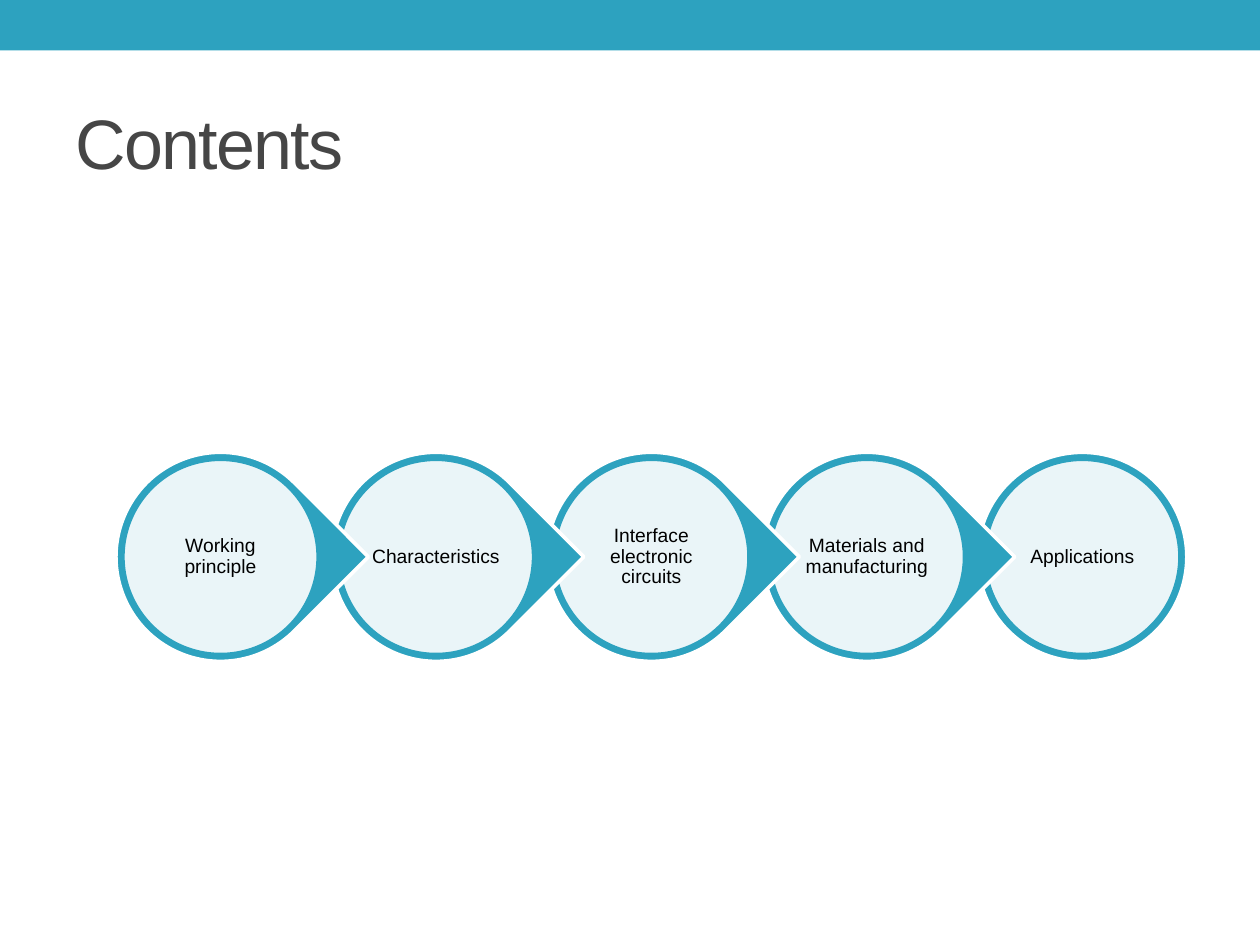
import dataclasses

import pptx
import pptx.dml.color
import pptx.enum.shapes
import pptx.enum.text
import pptx.oxml
import pptx.oxml.ns
import pptx.util
from pptx.util import Inches

SHAPE = pptx.enum.shapes.MSO_SHAPE
ALIGN = pptx.enum.text.PP_ALIGN


def rgb(value):
    return pptx.dml.color.RGBColor.from_string(value)


@dataclasses.dataclass(frozen=True)
class Theme:
    accent: str = "2DA2BF"
    white: str = "FFFFFF"
    title: str = "464646"
    label: str = "000000"
    font: str = "Arial"
    title_size: int = 40
    label_size: int = 11
    line_width: float = 2.08


class SlideBuilder:
    def __init__(self, slide, theme):
        self.s = slide
        self.theme = theme
        self.shapes = slide.shapes

    def begin_group(self):
        """Send all later elements into a new group."""
        self.shapes = self.s.shapes.add_group_shape().shapes

    def shape(self, kind, box, fill, line=None, opacity=None):
        sp = self.shapes.add_shape(kind, *map(Inches, box))
        sp.shadow.inherit = False
        sp.fill.solid()
        sp.fill.fore_color.rgb = rgb(fill)
        if opacity is not None:
            color = sp.fill._xPr.find(".//" + pptx.oxml.ns.qn("a:srgbClr"))
            color.append(pptx.oxml.parse_xml(
                f'<a:alpha {pptx.oxml.ns.nsdecls("a")} val="{opacity * 1000}"/>'))
        if line:
            sp.line.color.rgb = rgb(line)
            sp.line.width = pptx.util.Pt(self.theme.line_width)
        else:
            sp.line.fill.background()
        return sp

    def text(self, text, box, size, color, inset=None, tracking=None, **paragraph):
        """Add vertically centred text; extra keywords set paragraph formats."""
        tf = self.shapes.add_textbox(*map(Inches, box)).text_frame
        tf.word_wrap = True
        tf.vertical_anchor = pptx.enum.text.MSO_ANCHOR.MIDDLE
        if inset is not None:
            for side in ("left", "top", "right", "bottom"):
                setattr(tf, f"margin_{side}", Inches(inset))
        p = tf.paragraphs[0]
        for name, value in paragraph.items():
            setattr(p, name, value)
        r = p.add_run()
        r.text = text
        r.font.color.rgb = rgb(color)
        for name, value in {"name": self.theme.font,
                            "size": pptx.util.Pt(size)}.items():
            setattr(r.font, name, value)
        if tracking is not None:
            r._r.get_or_add_rPr().set("spc", str(tracking * 100))

    def step(self, label, center_x, center_y, pointed):
        """Draw one ringed step, with a tip to the right if pointed."""
        def square(side):
            return center_x - side / 2, center_y - side / 2, side, side

        t = self.theme
        kind = SHAPE.TEAR if pointed else SHAPE.OVAL
        ring = self.shape(kind, square(1.66), t.accent, t.white)
        if pointed:
            ring.adjustments[0] = 1
            ring.rotation = 45
        self.shape(SHAPE.OVAL, square(1.55), t.white, t.accent, opacity=90)
        self.text(label, square(1.11), t.label_size, t.label, inset=0.02,
                  alignment=ALIGN.CENTER, line_spacing=0.9,
                  space_after=pptx.util.Pt(4))


def main():
    prs = pptx.Presentation()
    prs.slide_width, prs.slide_height = Inches(10), Inches(7.5)
    theme = Theme()
    builder = SlideBuilder(prs.slides.add_slide(prs.slide_layouts[6]), theme)

    builder.shape(SHAPE.RECTANGLE, (0, 0, 10, 0.4), theme.accent)
    builder.text("Contents", (0.5, 0.58, 9, 1.08), theme.title_size,
                 theme.title, tracking=-1)

    steps = ["Working principle", "Characteristics",
             "Interface electronic circuits", "Materials and manufacturing",
             "Applications"]
    first_x, pitch, center_y = 1.75, 1.71, 4.42
    last = len(steps) - 1
    builder.begin_group()
    # Right to left, so that each tip lies over the next circle.
    for i, label in reversed(list(enumerate(steps))):
        builder.step(label, first_x + i * pitch, center_y, pointed=i < last)

    prs.save("out.pptx")


if __name__ == "__main__":
    main()
